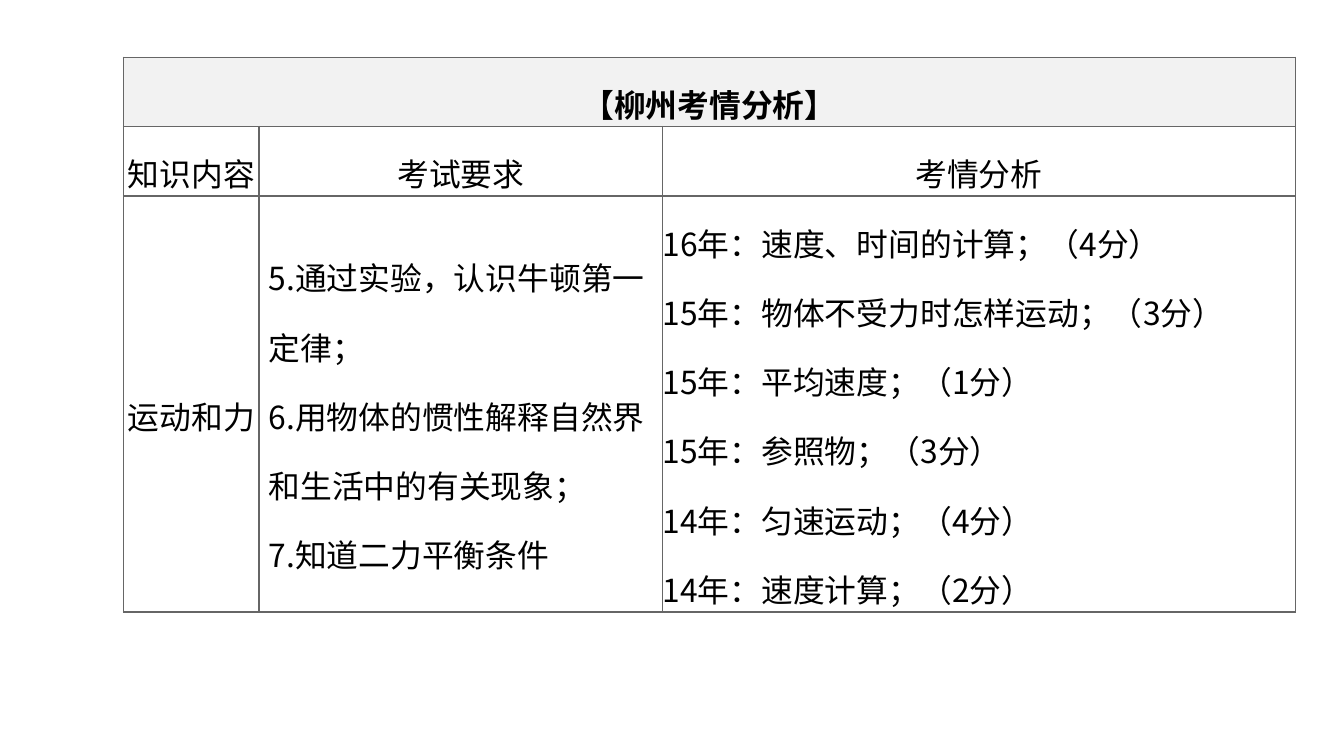
"""Build the exam analysis table slide."""
from lxml import etree
from pptx import Presentation
from pptx.dml.color import RGBColor
from pptx.enum.text import MSO_ANCHOR, PP_ALIGN
from pptx.oxml.ns import qn
from pptx.util import Pt

MID = MSO_ANCHOR.MIDDLE
LEFT, CENTER = PP_ALIGN.LEFT, PP_ALIGN.CENTER
FONT = "Noto Sans CJK SC"
INK = {"text": "000000", "head": "F2F2F2", "line": "666666"}
COLS = [72.7, 216, 339.1]
ROWS = [37, 37, 222.8]


def write(cell, text, align=CENTER, bold=False, pad=0):
    cell.vertical_anchor = MID
    cell.margin_left = cell.margin_right = Pt(pad)
    cell.margin_top = cell.margin_bottom = Pt(0)
    frame = cell.text_frame
    frame.text = text
    for par in frame.paragraphs:
        par.alignment = align
        par.line_spacing = 1.5
        for run in par.runs:
            font = run.font
            font.name, font.size, font.bold = FONT, Pt(17), bold
            font.color.rgb = RGBColor.from_string(INK["text"])
            east = etree.SubElement(run._r.get_or_add_rPr(), qn("a:ea"))
            east.set("typeface", FONT)


def frame_cell(cell):
    props = cell._tc.get_or_add_tcPr()
    for spot, side in enumerate(("lnL", "lnR", "lnT", "lnB")):
        line = etree.Element(qn("a:" + side), w=str(Pt(1)))
        fill = etree.SubElement(line, qn("a:solidFill"))
        etree.SubElement(fill, qn("a:srgbClr"), val=INK["line"])
        props.insert(spot, line)


prs = Presentation()
prs.slide_width, prs.slide_height = Pt(720), Pt(405)
slide = prs.slides.add_slide(prs.slide_layouts[6])

shape = slide.shapes.add_table(
    len(ROWS), len(COLS), Pt(66.2), Pt(30.7), Pt(sum(COLS)), Pt(sum(ROWS)))
table = shape.table
table.first_row = table.horz_banding = False
for col, width in zip(table.columns, COLS):
    col.width = Pt(width)
for row, height in zip(table.rows, ROWS):
    row.height = Pt(height)

for cell in table.iter_cells():
    cell.fill.background()
    frame_cell(cell)

title = table.cell(0, 0)
title.merge(table.cell(0, 2))
title.fill.solid()
title.fill.fore_color.rgb = RGBColor.from_string(INK["head"])
write(title, "【柳州考情分析】", bold=True)

for spot, label in enumerate(("知识内容", "考试要求", "考情分析")):
    write(table.cell(1, spot), label)

goals = [
    "5.通过实验，认识牛顿第一定律；",
    "6.用物体的惯性解释自然界和生活中的有关现象；",
    "7.知道二力平衡条件",
]
exams = [
    "16年：速度、时间的计算；（4分）",
    "15年：物体不受力时怎样运动；（3分）",
    "15年：平均速度；（1分）",
    "15年：参照物；（3分）",
    "14年：匀速运动；（4分）",
    "14年：速度计算；（2分）",
]
write(table.cell(2, 0), "运动和力")
write(table.cell(2, 1), "\n".join(goals), align=LEFT, pad=5)
write(table.cell(2, 2), "\n".join(exams), align=LEFT)

prs.save("out.pptx")
